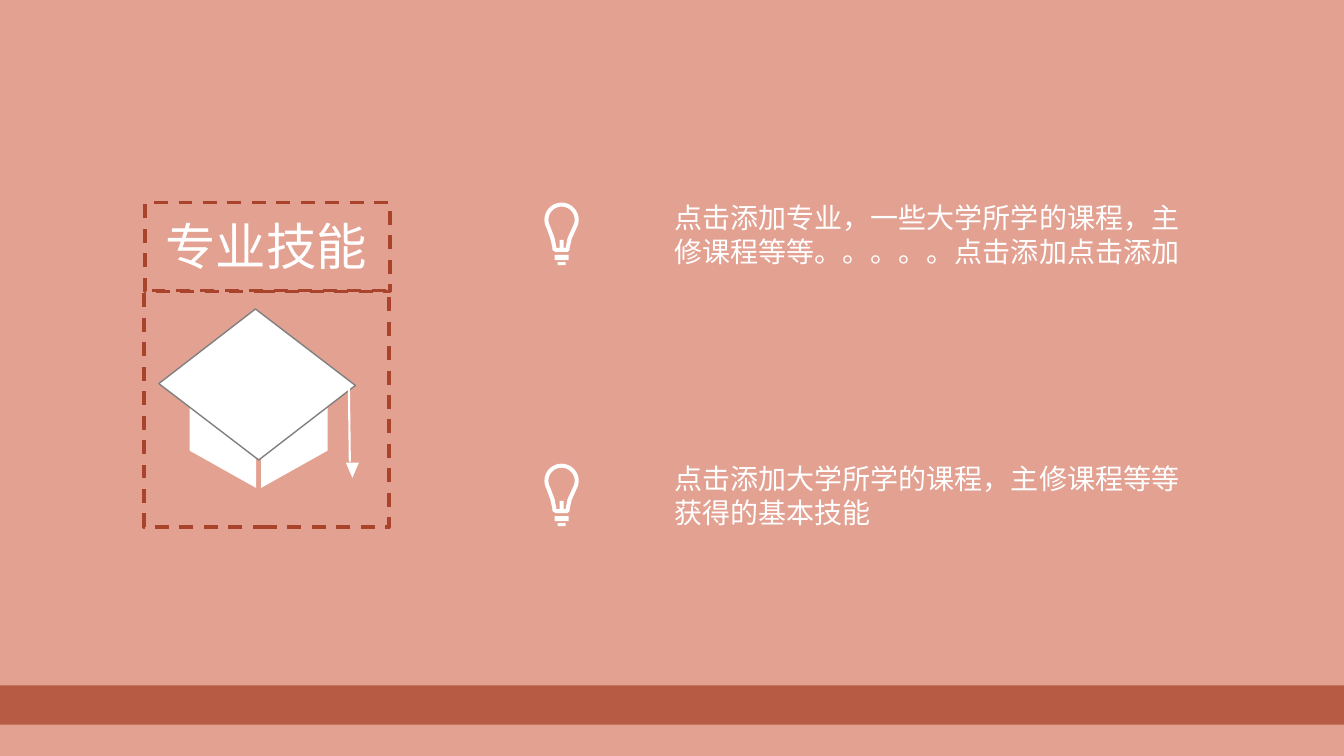
from dataclasses import dataclass
from math import cos, radians, sin

from lxml.etree import SubElement
from pptx import Presentation
from pptx.dml.color import RGBColor
from pptx.enum.dml import MSO_LINE
from pptx.enum.shapes import MSO_CONNECTOR, MSO_SHAPE
from pptx.enum.text import MSO_AUTO_SIZE
from pptx.oxml.ns import qn
from pptx.util import Inches, Pt

FONT = "Noto Sans CJK SC"
WHITE, RUST, GRAY, SALMON = "FFFFFF", "A9432B", "808080", "E3A192"
LINE_SPACING = 1.22

Point = tuple[float, float]


@dataclass
class Box:
    left: float
    top: float
    width: float
    height: float

    def lengths(self) -> list:
        return [Inches(n) for n in (self.left, self.top, self.width, self.height)]


@dataclass
class Caption:
    box: Box
    text: str
    size: int


@dataclass
class Skill:
    bulb_top: float
    caption: Caption


TITLE = Caption(Box(1.54, 2.07, 2.51, 0.71), "专业技能", 36)
SKILLS = [
    Skill(2.01, Caption(Box(6.59, 1.93, 5.47, 0.77),
                        "点击添加专业，一些大学所学的课程，主修课程等等。。。。。点击添加点击添加", 20)),
    Skill(4.6, Caption(Box(6.59, 4.52, 5.47, 0.77),
                       "点击添加大学所学的课程，主修课程等等获得的基本技能", 20)),
]
FRAMES = [Box(1.43, 2.88, 2.43, 2.35), Box(1.44, 2.01, 2.43, 0.88)]
CAP_SIDES = [
    [(1.88, 3.95), (2.54, 4.3), (2.54, 4.84), (1.88, 4.47)],
    [(2.59, 4.3), (3.25, 3.95), (3.25, 4.47), (2.59, 4.84)],
]
BULB_LEFT = 5.4


def color(hex_value: str) -> RGBColor:
    return RGBColor.from_string(hex_value)


def fill_shape(shape, fill: str | None) -> None:
    shape.shadow.inherit = False
    shape.line.fill.background()
    if fill:
        shape.fill.solid()
        shape.fill.fore_color.rgb = color(fill)
    else:
        shape.fill.background()


def add_preset(slide, kind, box: Box, fill: str | None = None, rotation: float = 0):
    shape = slide.shapes.add_shape(kind, *box.lengths())
    fill_shape(shape, fill)
    shape.rotation = rotation
    return shape


def outline(shape, hex_value: str, width: float) -> None:
    shape.line.color.rgb = color(hex_value)
    shape.line.width = Pt(width)


def add_polygons(slide, polygons: list[list[Point]], left: float = 0, top: float = 0) -> None:
    contours = [[(Inches(left + x), Inches(top + y)) for x, y in polygon]
                for polygon in polygons]
    builder = slide.shapes.build_freeform(*contours[0][0])
    for index, contour in enumerate(contours):
        if index:
            builder.move_to(*contour[0])
        builder.add_line_segments(contour[1:], close=True)
    fill_shape(builder.convert_to_shape(), WHITE)


def dome(radius: float) -> list[Point]:
    angles = [radians(degrees) for degrees in range(150, 391, 10)]
    return [(0.17 + radius * cos(a), 0.17 + radius * sin(a)) for a in angles]


def bar(left: float, top: float, right: float, bottom: float) -> list[Point]:
    return [(left, top), (right, top), (right, bottom), (left, bottom)]


def add_bulb(slide, top: float) -> None:
    glass = dome(0.17) + [(0.27, 0.36), (0.25, 0.45), (0.25, 0.47), (0.23, 0.49),
                          (0.11, 0.49), (0.08, 0.47), (0.08, 0.45), (0.06, 0.36)]
    hollow = dome(0.13) + [(0.23, 0.35), (0.21, 0.45), (0.19, 0.45), (0.19, 0.37),
                           (0.15, 0.37), (0.15, 0.45), (0.12, 0.45), (0.1, 0.35)]
    base = [bar(0.1, 0.52, 0.24, 0.57), bar(0.13, 0.59, 0.21, 0.62)]
    add_polygons(slide, [glass, hollow, *base], BULB_LEFT, top)


def add_caption(slide, caption: Caption) -> None:
    frame = slide.shapes.add_textbox(*caption.box.lengths()).text_frame
    frame.word_wrap = True
    frame.auto_size = MSO_AUTO_SIZE.SHAPE_TO_FIT_TEXT
    paragraph = frame.paragraphs[0]
    paragraph.line_spacing = Pt(caption.size * LINE_SPACING)
    run = paragraph.add_run()
    run.text = caption.text
    run.font.size = Pt(caption.size)
    run.font.name = FONT
    run.font.color.rgb = color(WHITE)
    SubElement(run.font._element, qn("a:ea")).set("typeface", FONT)


def add_graduation_cap(slide) -> None:
    for side in CAP_SIDES:
        add_polygons(slide, [side])
    board = add_preset(slide, MSO_SHAPE.FLOWCHART_DATA, Box(1.77, 3.23, 1.56, 1.17), WHITE, 37.4)
    outline(board, GRAY, 1)
    # Tassel
    cord = slide.shapes.add_connector(MSO_CONNECTOR.STRAIGHT, Inches(3.46), Inches(3.81),
                                      Inches(3.47), Inches(4.58))
    outline(cord, WHITE, 1.5)
    SubElement(cord._element.spPr, qn("a:effectLst"))
    add_preset(slide, MSO_SHAPE.ISOSCELES_TRIANGLE, Box(3.43, 4.59, 0.13, 0.15), WHITE, 180)


def main() -> None:
    presentation = Presentation()
    presentation.slide_width, presentation.slide_height = Inches(13.33), Inches(7.5)
    slide = presentation.slides.add_slide(presentation.slide_layouts[6])
    slide.background.fill.solid()
    slide.background.fill.fore_color.rgb = color(SALMON)

    # Title panel with graduation cap
    add_graduation_cap(slide)
    for box in FRAMES:
        frame = add_preset(slide, MSO_SHAPE.RECTANGLE, box)
        outline(frame, RUST, 2.5)
        frame.line.dash_style = MSO_LINE.DASH
    add_caption(slide, TITLE)

    # Skills
    for skill in SKILLS:
        add_bulb(slide, skill.bulb_top)
        add_caption(slide, skill.caption)

    # Translucent footer band
    band = add_preset(slide, MSO_SHAPE.RECTANGLE, Box(0, 6.8, 13.33, 0.39), RUST)
    band_color = band._element.spPr.find(qn("a:solidFill")).find(qn("a:srgbClr"))
    SubElement(band_color, qn("a:alpha")).set("val", "74000")

    presentation.save("out.pptx")


if __name__ == "__main__":
    main()
